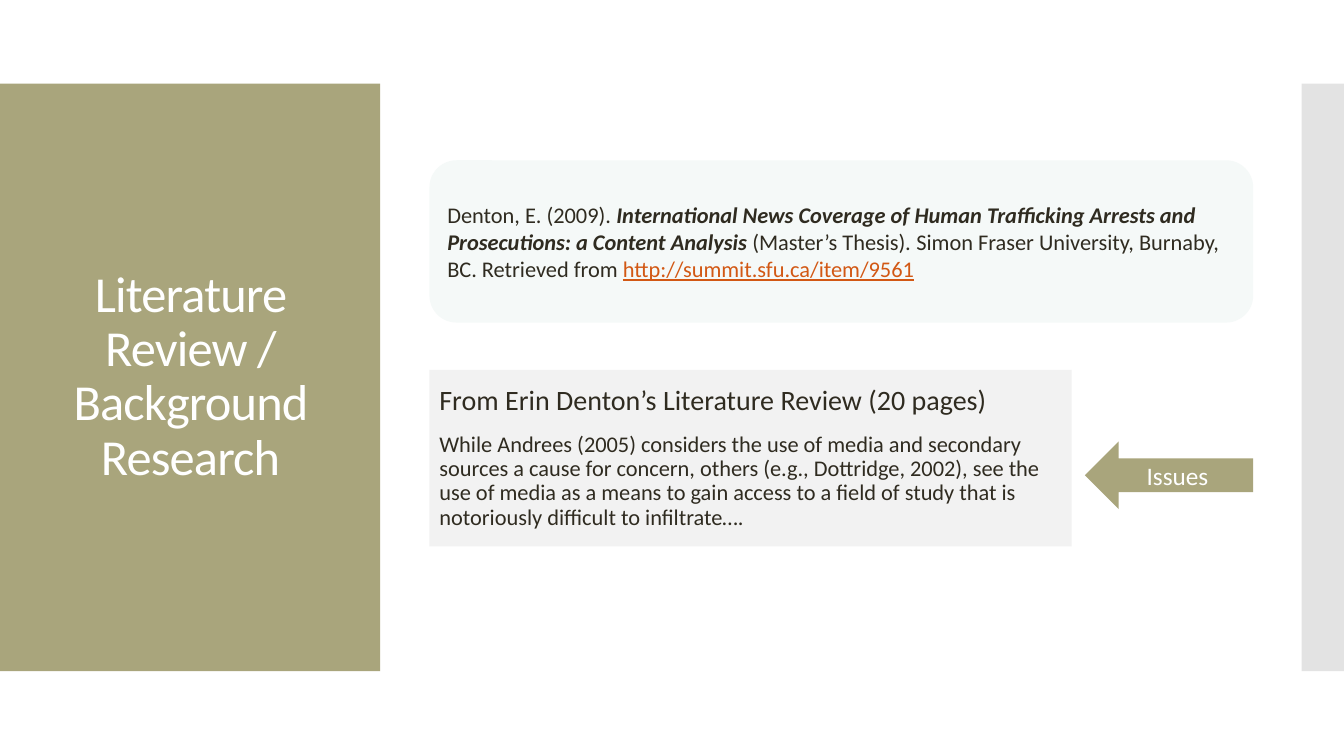
from lxml import etree
from pptx import Presentation
from pptx.dml.color import RGBColor
from pptx.enum.shapes import MSO_SHAPE as Kind
from pptx.enum.text import MSO_ANCHOR, PP_ALIGN
from pptx.oxml.ns import qn
from pptx.util import Inches, Pt

OLIVE = RGBColor(0xA9, 0xA5, 0x7C)
SILVER = RGBColor(0xC8, 0xC8, 0xC8)
PALE_GRAY = RGBColor(0xF2, 0xF2, 0xF2)
PALE_BLUE = RGBColor(0xF5, 0xF9, 0xF8)
WHITE = RGBColor(0xFF, 0xFF, 0xFF)
INK = RGBColor(0x2F, 0x2B, 0x20)
ORANGE = RGBColor(0xD2, 0x58, 0x14)

TITLE = "Literature Review / Background Research"
CITATION = [
    ("Denton, E. (2009). ", {}),
    ("International News Coverage of Human Trafficking Arrests and "
     "Prosecutions: a Content Analysis ", {"bold": True, "italic": True}),
    ("(Master’s Thesis)", {}),
    (".", {"italic": True}),
    (" Simon Fraser University, Burnaby, BC. Retrieved from ", {}),
    ("http://summit.sfu.ca/item/9561", {"underline": True, "color": ORANGE}),
]
REVIEW_HEADING = "From Erin Denton’s Literature Review (20 pages)"
REVIEW_QUOTE = (
    "While Andrees (2005) considers the use of media and secondary sources "
    "a cause for concern, others (e.g., Dottridge, 2002), see the use of media "
    "as a means to gain access to a field of study that is notoriously "
    "difficult to infiltrate…."
)
ISSUES = "Issues"

WIDTH, HEIGHT = 13.33, 7.5
BAND_TOP, BAND_HEIGHT = 0.83, 5.83
SIDE_WIDTH = 0.42
LEFT, RIGHT = 4.26, 12.43
ARROW_WIDTH = 1.67

deck = Presentation()
deck.slide_width, deck.slide_height = Inches(WIDTH), Inches(HEIGHT)
page = deck.slides.add_slide(deck.slide_layouts[6])


def add_block(kind, left, top, width, height, fill):
    block = page.shapes.add_shape(
        kind, Inches(left), Inches(top), Inches(width), Inches(height))
    block.shadow.inherit = False
    block.fill.solid()
    block.fill.fore_color.rgb = fill
    block.line.fill.background()
    return block


def write(box, paragraphs, color, align=PP_ALIGN.LEFT, spacing=1.0, before=0):
    frame = box.text_frame
    frame.word_wrap = True
    frame.vertical_anchor = MSO_ANCHOR.MIDDLE
    for index, (size, pieces) in enumerate(paragraphs):
        para = frame.add_paragraph() if index else frame.paragraphs[0]
        para.alignment = align
        para.line_spacing = spacing
        para.space_before = Pt(before)
        for words, style in pieces:
            span = para.add_run()
            span.text = words
            font = span.font
            font.name, font.size = "Calibri", Pt(size)
            font.color.rgb = style.get("color", color)
            font.bold = style.get("bold", False)
            font.italic = style.get("italic", False)
            font.underline = style.get("underline", False)


add_block(Kind.RECTANGLE, 0, BAND_TOP, 3.77, BAND_HEIGHT, OLIVE)
side_bar = add_block(Kind.RECTANGLE, WIDTH - SIDE_WIDTH, BAND_TOP,
                     SIDE_WIDTH, BAND_HEIGHT, SILVER)
side_color = side_bar.fill._xPr.find(qn("a:solidFill"))[0]
etree.SubElement(side_color, qn("a:alpha")).set("val", "50000")

title = page.shapes.add_textbox(Inches(0.28), Inches(1.23), Inches(3.22), Inches(5.03))
write(title, [(36, [(TITLE, {})])], WHITE, PP_ALIGN.CENTER, 0.9)
title.text_frame.paragraphs[0].runs[0].font._element.set("spc", "-60")

review = add_block(Kind.RECTANGLE, LEFT, 3.67, 6.37, 1.75, PALE_GRAY)
write(review, [(20, [(REVIEW_HEADING, {})]), (16, [(REVIEW_QUOTE, {})])],
      INK, spacing=0.9, before=12)

citation = add_block(Kind.ROUNDED_RECTANGLE, LEFT, 1.59, RIGHT - LEFT, 1.61, PALE_BLUE)
write(citation, [(16, CITATION)], INK)

arrow = add_block(Kind.LEFT_ARROW, RIGHT - ARROW_WIDTH, 4.38, ARROW_WIDTH, 0.67, OLIVE)
write(arrow, [(18, [(ISSUES, {})])], WHITE, PP_ALIGN.CENTER)

deck.save("out.pptx")
